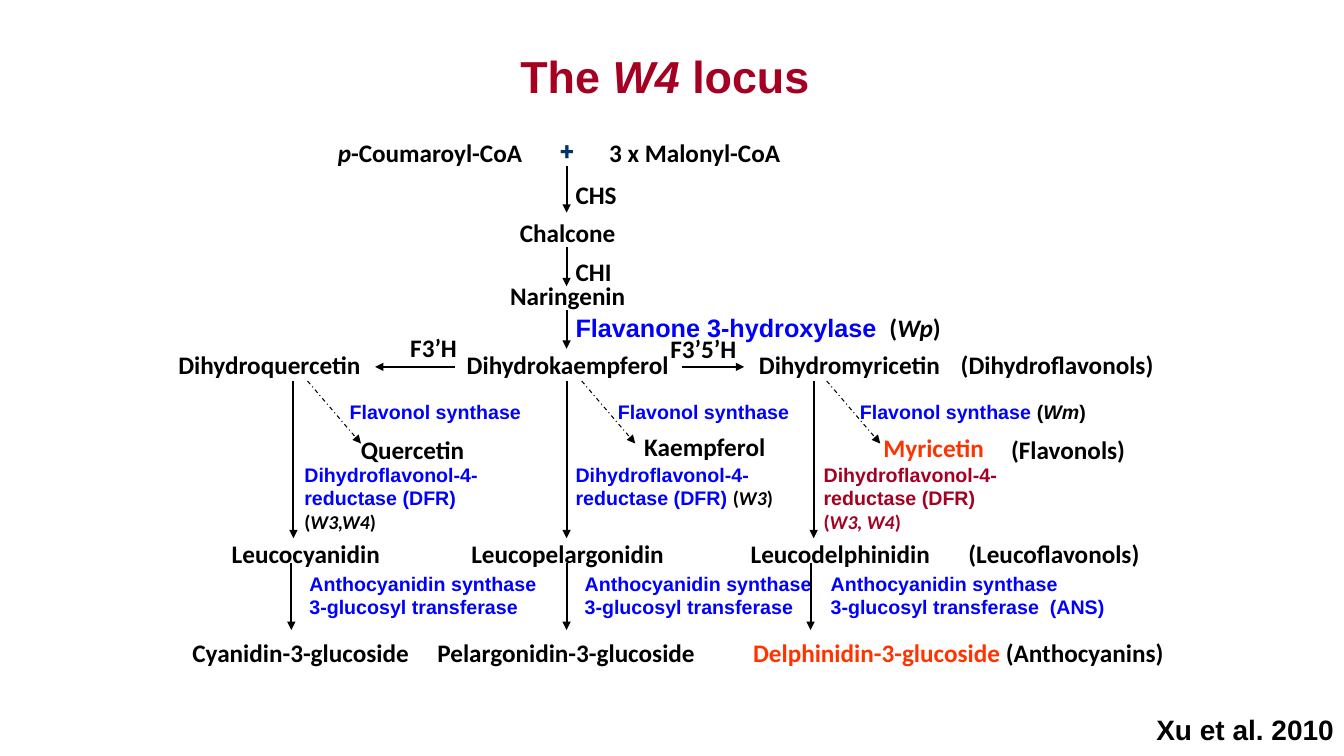
from dataclasses import dataclass

from lxml.etree import SubElement
from pptx import Presentation
from pptx.dml.color import RGBColor
from pptx.enum.dml import MSO_LINE
from pptx.enum.shapes import MSO_CONNECTOR
from pptx.enum.text import MSO_ANCHOR, PP_ALIGN
from pptx.oxml.ns import qn
from pptx.util import Inches, Pt

BLACK, BLUE, CRIMSON, ORANGE, NAVY = "000000", "0000FF", "A50021", "FF3300", "003366"
LEFT, CENTER, RIGHT = PP_ALIGN.LEFT, PP_ALIGN.CENTER, PP_ALIGN.RIGHT
DIHYDRO_TOP, LEUCO_TOP, ANTHO_TOP = 3.42, 5.29, 6.27
MAIN_X = 5.62


@dataclass(frozen=True)
class Span:
    text: str
    color: str = BLACK
    font: str = "Calibri"
    italic: bool = False


@dataclass(frozen=True)
class Label:
    lines: list[list[Span]]
    left: float
    top: float
    width: float
    align: PP_ALIGN = LEFT
    size: int = 18
    height: float = 0.3
    right_inset: float = 0.1
    bottom_inset: float = 0.05
    wrap: bool = True
    anchor: MSO_ANCHOR = MSO_ANCHOR.TOP


@dataclass(frozen=True)
class Arrow:
    x1: float
    y1: float
    x2: float
    y2: float
    dashed: bool = False


@dataclass(frozen=True)
class Branch:
    stem_x: float
    lower_stem_x: float
    dash_x: float
    synthase_left: float
    synthase_gene: str
    reductase_left: float
    reductase_width: float
    reductase_gene: str
    reductase_color: str
    gene_color: str
    antho_left: float
    antho_width: float
    transferase: str


def rgb(color: str) -> RGBColor:
    return RGBColor.from_string(color)


def compound(name: str, left: float, top: float, width: float,
             align: PP_ALIGN = CENTER, color: str = BLACK) -> Label:
    return Label([[Span(name, color)]], left, top, width, align)


def gene(name: str, color: str = BLACK, font: str = "Calibri") -> list[Span]:
    return [Span("(", color, font), Span(name, color, font, True), Span(")", color, font)]


def enzyme(name: str, color: str = BLUE) -> Span:
    return Span(name, color, "Arial")


def fill_frame(frame, lines: list[list[Span]], size: int, align: PP_ALIGN) -> None:
    for index, spans in enumerate(lines):
        paragraph = frame.add_paragraph() if index else frame.paragraphs[0]
        paragraph.alignment = align
        for span in spans:
            run = paragraph.add_run()
            run.text = span.text
            run.font.name = span.font
            run.font.size = Pt(size)
            run.font.bold = True
            run.font.italic = span.italic
            run.font.color.rgb = rgb(span.color)


def draw_label(slide, label: Label) -> None:
    box = slide.shapes.add_textbox(Inches(label.left), Inches(label.top),
                                   Inches(label.width), Inches(label.height))
    frame = box.text_frame
    frame.word_wrap = label.wrap
    frame.vertical_anchor = label.anchor
    frame.margin_right = Inches(label.right_inset)
    frame.margin_bottom = Inches(label.bottom_inset)
    fill_frame(frame, label.lines, label.size, label.align)


def draw_arrow(slide, arrow: Arrow) -> None:
    connector = slide.shapes.add_connector(
        MSO_CONNECTOR.STRAIGHT, Inches(arrow.x1), Inches(arrow.y1),
        Inches(arrow.x2), Inches(arrow.y2))
    connector.line.color.rgb = rgb(BLACK)
    connector.line.width = Pt(0.75 if arrow.dashed else 1.5)
    if arrow.dashed:
        connector.line.dash_style = MSO_LINE.DASH_DOT
    SubElement(connector.line._get_or_add_ln(), qn("a:tailEnd"), type="triangle")
    SubElement(connector._element.spPr, qn("a:effectLst"))


def draw_branch(slide, branch: Branch) -> None:
    draw_arrow(slide, Arrow(branch.stem_x, 3.78, branch.stem_x, 5.34))
    draw_arrow(slide, Arrow(branch.lower_stem_x, 5.59, branch.lower_stem_x, 6.25))
    draw_arrow(slide, Arrow(branch.dash_x, 3.78, branch.dash_x + 0.53, 4.4, dashed=True))
    synthase = [enzyme("Flavonol synthase ")]
    if branch.synthase_gene:
        synthase += gene(branch.synthase_gene, font="Arial")
    reductase = [enzyme("Dihydroflavonol-4-reductase (DFR) ", branch.reductase_color),
                 *gene(branch.reductase_gene, branch.gene_color)]
    antho = [[enzyme("Anthocyanidin synthase")], [enzyme(branch.transferase)]]
    draw_label(slide, Label([synthase], branch.synthase_left, 3.92, 3.24, size=14))
    draw_label(slide, Label([reductase], branch.reductase_left, 4.54,
                            branch.reductase_width, size=14))
    draw_label(slide, Label(antho, branch.antho_left, 5.62, branch.antho_width, size=14,
                            height=0.57, wrap=False, anchor=MSO_ANCHOR.MIDDLE))


BRANCHES = [
    Branch(2.91, 2.89, 3.05, 3.37, "", 2.92, 2.39, "W3,W4", BLUE, BLACK,
           2.97, 2.51, "3-glucosyl transferase"),
    Branch(MAIN_X, MAIN_X, 5.77, 6.03, "", 5.61, 2.39, "W3", BLUE, BLACK,
           5.7, 2.51, "3-glucosyl transferase"),
    Branch(8.07, 8.04, 8.2, 8.43, "Wm", 8.07, 2.05, "W3, W4", CRIMSON, CRIMSON,
           8.14, 2.93, "3-glucosyl transferase  (ANS)"),
]

ARROWS = [Arrow(MAIN_X, top, MAIN_X, bottom)
          for top, bottom in [(1.65, 2.11), (2.45, 2.84), (3.08, 3.46)]]
ARROWS += [Arrow(4.51, 3.64, 3.72, 3.64), Arrow(6.76, 3.64, 7.38, 3.64)]

LABELS = [
    Label([[Span("p", italic=True), Span("-Coumaroyl-CoA")]], 2.78, 1.31, 2.97, CENTER),
    Label([[Span("+", NAVY, "Roboto")]], 5.26, 1.29, 0.73, CENTER, height=0.4),
    compound("3 x Malonyl-CoA", 5.57, 1.31, 2.64),
    compound("CHS", 5.61, 1.73, 2.34, LEFT),
    compound("Chalcone", 3.72, 2.11, 3.82),
    compound("CHI", 5.61, 2.49, 0.82, LEFT),
    Label([[Span("Naringenin")]], 4.39, 2.73, 2.48, CENTER, bottom_inset=0),
    Label([[enzyme("Flavanone 3-hydroxylase "), Span(" "), *gene("Wp")]], 5.61, 3.05, 4.69),
    compound("F3’H", 3.97, 3.25, 1.45, LEFT),
    compound("F3’5’H", 6.55, 3.26, 1.41, LEFT),
    compound("Dihydroquercetin", 1.67, DIHYDRO_TOP, 2.52, LEFT),
    compound("Dihydrokaempferol", 3.94, DIHYDRO_TOP, 3.38),
    compound("Dihydromyricetin", 7.34, DIHYDRO_TOP, 2.17),
    compound("(Dihydroflavonols)", 9.28, DIHYDRO_TOP, 2.26, RIGHT),
    compound("Quercetin", 3.48, 4.26, 1.5, LEFT),
    compound("Kaempferol", 6.13, 4.23, 1.72),
    compound("Myricetin", 8.6, 4.24, 1.32, color=ORANGE),
    compound("(Flavonols)", 9.93, 4.26, 1.73, LEFT),
    compound("Leucocyanidin", 2.2, LEUCO_TOP, 2.3, LEFT),
    compound("Leucopelargonidin", 4.31, LEUCO_TOP, 2.64),
    compound("Leucodelphinidin", 7.33, LEUCO_TOP, 2.01),
    compound("(Leucoflavonols)", 9.39, LEUCO_TOP, 2.01, RIGHT),
    compound("Cyanidin-3-glucoside", 1.81, ANTHO_TOP, 2.59, LEFT),
    compound("Pelargonidin-3-glucoside", 4.24, ANTHO_TOP, 3.17, LEFT),
    compound("Delphinidin-3-glucoside", 7.34, ANTHO_TOP, 2.71, color=ORANGE),
    compound("(Anthocyanins)", 9.54, ANTHO_TOP, 2.1, RIGHT),
    Label([[Span("Xu et al. 2010", font="Arial")]], 11.37, 7.02, 1.96,
          size=20, height=0.44, right_inset=0),
]


def main() -> None:
    presentation = Presentation()
    presentation.slide_width, presentation.slide_height = Inches(13.33), Inches(7.5)
    slide = presentation.slides.add_slide(presentation.slide_layouts[5])
    title = slide.shapes.title
    title.left, title.top = Inches(2), Inches(0.43)
    title.width, title.height = Inches(9.19), Inches(0.63)
    title.text_frame.vertical_anchor = MSO_ANCHOR.TOP
    heading = [Span("The ", CRIMSON, "Arial"), Span("W4", CRIMSON, "Arial", True),
               Span(" locus", CRIMSON, "Arial")]
    fill_frame(title.text_frame, [heading], 32, CENTER)
    for arrow in ARROWS:
        draw_arrow(slide, arrow)
    for branch in BRANCHES:
        draw_branch(slide, branch)
    for label in LABELS:
        draw_label(slide, label)
    presentation.save("out.pptx")


if __name__ == "__main__":
    main()
